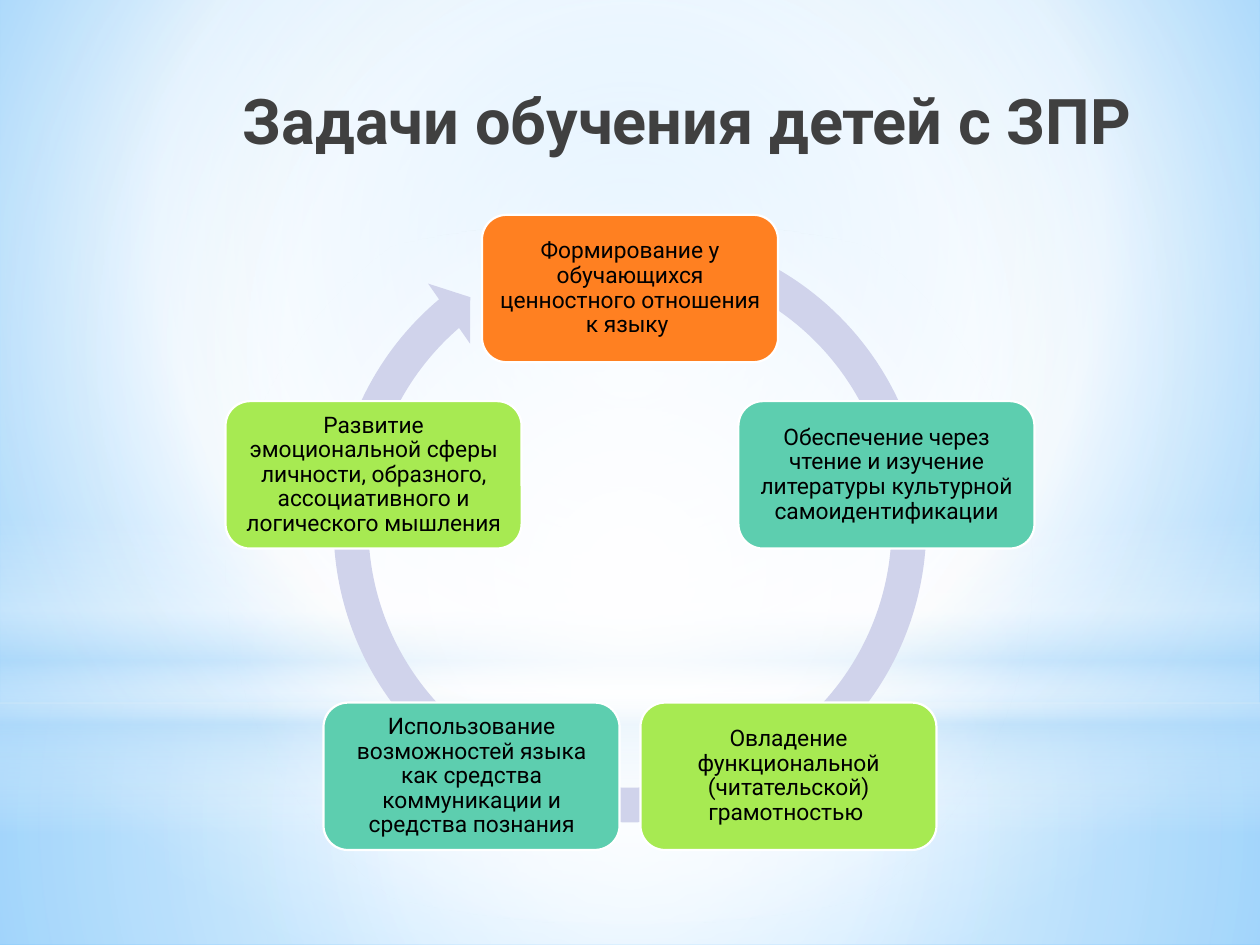
"""Build a slide showing five teaching goals on a circular arrow."""
import math
from dataclasses import dataclass

from pptx import Presentation
from pptx import util as u
from pptx.dml.color import RGBColor
from pptx.enum import shapes, text
from pptx.oxml import ns, parse_xml

ORANGE = RGBColor(0xFF, 0x80, 0x21)
TEAL = RGBColor(0x5D, 0xCE, 0xAF)
GREEN = RGBColor(0xA7, 0xEA, 0x52)
LAVENDER = RGBColor(0xD0, 0xD3, 0xEB)
WHITE = RGBColor(0xFF, 0xFF, 0xFF)
BLACK = RGBColor(0x00, 0x00, 0x00)
CHARCOAL = RGBColor(0x40, 0x40, 0x40)
SKY = RGBColor(0x9E, 0xD5, 0xFF)
AZURE = RGBColor(0x5B, 0xB9, 0xFF)
PALE_BLUE = RGBColor(0xB4, 0xDC, 0xFA)

FONT = "Roboto"
CENTER_X, CENTER_Y, RADIUS = 5, 4.43, 2.14
BOX_WIDTH, BOX_HEIGHT = 2.35, 1.17
ARROW_SIZE = 5.01
ARROW_ADJUSTMENTS = (0.055, 3.307, 137.749, 173.866, 0.058)
TITLE_FORMAT = {"name": FONT, "size": u.Pt(36), "bold": True}
GOAL_FORMAT = {"name": FONT, "size": u.Pt(13)}
GOAL_FRAME = {
    "word_wrap": True,
    "vertical_anchor": text.MSO_ANCHOR.MIDDLE,
    **{f"margin_{side}": u.Inches(0.05) for side in ("left", "top", "right", "bottom")},
}


@dataclass(frozen=True)
class Stop:
    position: int
    color: RGBColor
    opacity: int = 100


@dataclass(frozen=True)
class Gradient:
    stops: tuple[Stop, ...]
    focus: tuple[int, ...] | None = (50, 50, 50, 50)


@dataclass(frozen=True)
class Glow:
    kind: shapes.MSO_SHAPE
    top: float
    height: float
    gradient: Gradient


@dataclass(frozen=True)
class Goal:
    wording: str
    color: RGBColor


BACKGROUND = Gradient((Stop(0, SKY), Stop(60, WHITE), Stop(100, AZURE)), (20, 10, 20, 60))
GLOWS = (
    Glow(shapes.MSO_SHAPE.RECTANGLE, 5.58, 1.92, Gradient(
        (Stop(0, WHITE, 91), Stop(37, WHITE, 76), Stop(100, PALE_BLUE, 79)))),
    Glow(shapes.MSO_SHAPE.RECTANGLE, 0, 5.58, Gradient(
        (Stop(0, WHITE, 89), Stop(48, WHITE, 62), Stop(100, PALE_BLUE, 79)))),
    Glow(shapes.MSO_SHAPE.RECTANGLE, 4.12, 2.5, Gradient(
        (Stop(0, WHITE, 0), Stop(29, WHITE, 30), Stop(45, PALE_BLUE, 40),
         Stop(55, WHITE, 26), Stop(65, PALE_BLUE, 60), Stop(100, WHITE, 0)), None)),
    Glow(shapes.MSO_SHAPE.OVAL, 1.75, 5.58, Gradient((Stop(0, WHITE), Stop(56, WHITE, 0)))),
)
GOALS = (
    Goal("Формирование у обучающихся ценностного отношения к языку ", ORANGE),
    Goal("Обеспечение через чтение и изучение литературы культурной самоидентификации", TEAL),
    Goal("Овладение функциональной (читательской) грамотностью ", GREEN),
    Goal("Использование возможностей языка как средства коммуникации и средства познания", TEAL),
    Goal("Развитие эмоциональной сферы личности, образного, ассоциативного и логического мышления",
         GREEN),
)


def apply_format(target, values: dict) -> None:
    for name, value in values.items():
        setattr(target, name, value)


def apply_gradient(fill, element, gradient: Gradient) -> None:
    fill.solid()
    fill.fore_color.rgb = WHITE
    stops = "".join(
        f'<a:gs pos="{stop.position * 1000}"><a:srgbClr val="{stop.color}">'
        f'<a:alpha val="{stop.opacity * 1000}"/></a:srgbClr></a:gs>'
        for stop in gradient.stops
    )
    direction = '<a:lin ang="5400000" scaled="0"/>'
    if gradient.focus:
        edges = " ".join(
            f'{side}="{value * 1000}"' for side, value in zip("ltrb", gradient.focus))
        direction = f'<a:path path="circle"><a:fillToRect {edges}/></a:path>'
    solid = next(element.iter(ns.qn("a:solidFill")))
    solid.getparent().replace(solid, parse_xml(
        f'<a:gradFill {ns.nsdecls("a")} rotWithShape="1">'
        f"<a:gsLst>{stops}</a:gsLst>{direction}</a:gradFill>"))


def add_plain_shape(slide, kind: shapes.MSO_SHAPE, left: float, top: float,
                    width: float, height: float, color: RGBColor = WHITE):
    shape = slide.shapes.add_shape(kind, *map(u.Inches, (left, top, width, height)))
    shape.shadow.inherit = False
    shape.fill.solid()
    shape.fill.fore_color.rgb = color
    shape.line.fill.background()
    return shape


def write_text(frame, wording: str, alignment: text.PP_ALIGN, values: dict, color: RGBColor):
    paragraph = frame.paragraphs[0]
    paragraph.alignment = alignment
    run = paragraph.add_run()
    run.text = wording
    apply_format(run.font, values)
    run.font.color.rgb = color
    return paragraph


def add_glow(slide, glow: Glow) -> None:
    shape = add_plain_shape(slide, glow.kind, 0, glow.top, 10, glow.height)
    apply_gradient(shape.fill, shape.element.spPr, glow.gradient)


def add_title(slide, wording: str) -> None:
    box = slide.shapes.add_textbox(*map(u.Inches, (1.22, 0.6, 7.86, 0.94)))
    box.text_frame.word_wrap = True
    write_text(box.text_frame, wording, text.PP_ALIGN.RIGHT, TITLE_FORMAT, CHARCOAL)


def add_cycle_arrow(slide) -> None:
    arrow = add_plain_shape(slide, shapes.MSO_SHAPE.CIRCULAR_ARROW, CENTER_X - ARROW_SIZE / 2,
                            1.67, ARROW_SIZE, ARROW_SIZE, LAVENDER)
    for index, value in enumerate(ARROW_ADJUSTMENTS):
        arrow.adjustments[index] = value


def add_goal(slide, goal: Goal, angle: float) -> None:
    left = CENTER_X + RADIUS * math.sin(angle) - BOX_WIDTH / 2
    top = CENTER_Y - RADIUS * math.cos(angle) - BOX_HEIGHT / 2
    box = add_plain_shape(slide, shapes.MSO_SHAPE.ROUNDED_RECTANGLE,
                          left, top, BOX_WIDTH, BOX_HEIGHT, goal.color)
    box.line.color.rgb = WHITE
    box.line.width = u.Pt(1.25)
    apply_format(box.text_frame, GOAL_FRAME)
    paragraph = write_text(box.text_frame, goal.wording, text.PP_ALIGN.CENTER, GOAL_FORMAT, BLACK)
    paragraph.line_spacing = 0.9


def main() -> None:
    presentation = Presentation()
    presentation.slide_width, presentation.slide_height = u.Inches(10), u.Inches(7.5)
    slide = presentation.slides.add_slide(presentation.slide_layouts[6])
    apply_gradient(slide.background.fill, slide.element, BACKGROUND)
    for glow in GLOWS:
        add_glow(slide, glow)
    add_title(slide, "Задачи обучения детей с ЗПР")
    add_cycle_arrow(slide)
    for index, goal in enumerate(GOALS):
        add_goal(slide, goal, math.tau * index / len(GOALS))
    presentation.save("out.pptx")


if __name__ == "__main__":
    main()
